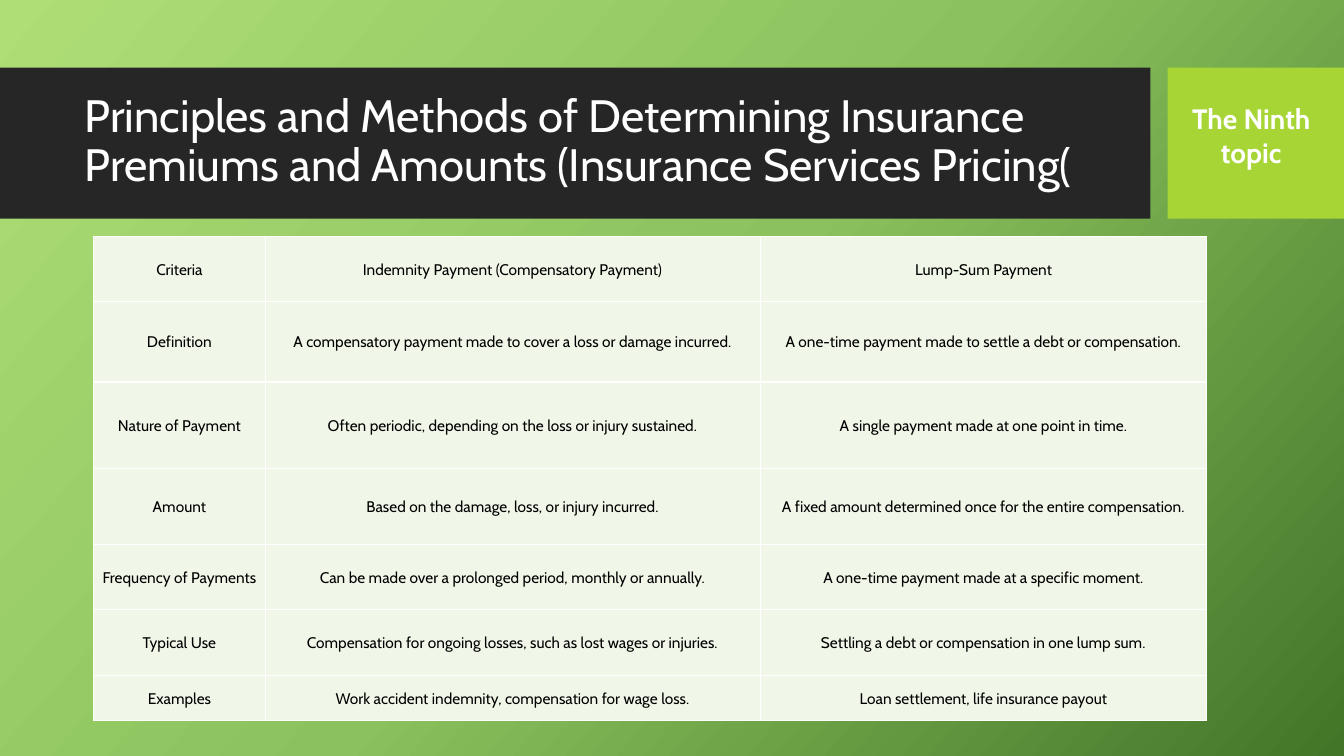
from copy import deepcopy
from typing import NamedTuple

from lxml.etree import SubElement
from pptx import Presentation
from pptx.dml.color import RGBColor
from pptx.enum.shapes import MSO_SHAPE
from pptx.enum.text import MSO_ANCHOR, MSO_AUTO_SIZE, PP_ALIGN
from pptx.oxml.ns import qn
from pptx.slide import Slide
from pptx.table import _Cell as Cell
from pptx.text.text import _Paragraph as Paragraph
from pptx.util import Inches, Pt

FONT = "Cabin"
WHITE = RGBColor(0xFF, 0xFF, 0xFF)
BLACK = RGBColor(0x00, 0x00, 0x00)
CHARCOAL = RGBColor(0x26, 0x26, 0x26)
LIME = RGBColor(0xA7, 0xD5, 0x35)
PALE_GREEN = RGBColor(0xF1, 0xF7, 0xE8)
BACKGROUND_STOPS = [
    (0, RGBColor(0xAF, 0xDE, 0x77)),
    (0.5, RGBColor(0x8B, 0xC2, 0x5D)),
    (1, RGBColor(0x43, 0x75, 0x28)),
]


class Band(NamedTuple):
    left: float
    width: float
    color: RGBColor


class Comparison(NamedTuple):
    height: float
    criterion: str
    indemnity: str
    lump_sum: str


BANDS = [Band(0, 11.41, CHARCOAL), Band(11.58, 1.75, LIME)]
COLUMN_WIDTHS = [1.7, 4.91, 4.43]
COMPARISONS = [
    Comparison(0.64, "Criteria", "Indemnity Payment (Compensatory Payment)",
               "Lump-Sum Payment"),
    Comparison(0.8, "Definition",
               "A compensatory payment made to cover a loss or damage incurred.",
               "A one-time payment made to settle a debt or compensation."),
    Comparison(0.86, "Nature of Payment",
               "Often periodic, depending on the loss or injury sustained.",
               "A single payment made at one point in time."),
    Comparison(0.75, "Amount", "Based on the damage, loss, or injury incurred.",
               "A fixed amount determined once for the entire compensation."),
    Comparison(0.65, "Frequency of Payments",
               "Can be made over a prolonged period, monthly or annually.",
               "A one-time payment made at a specific moment."),
    Comparison(0.65, "Typical Use",
               "Compensation for ongoing losses, such as lost wages or injuries.",
               "Settling a debt or compensation in one lump sum."),
    Comparison(0.45, "Examples",
               "Work accident indemnity, compensation for wage loss.",
               "Loan settlement, life insurance payout"),
]


def format_paragraph(paragraph: Paragraph, size: float, color: RGBColor,
                     alignment: PP_ALIGN = PP_ALIGN.CENTER, bold: bool = False) -> None:
    paragraph.alignment = alignment
    for run in paragraph.runs:
        run.font.name = FONT
        run.font.size = Pt(size)
        run.font.bold = bold
        run.font.color.rgb = color


def paint_background(slide: Slide) -> None:
    fill = slide.background.fill
    fill.gradient()
    fill.gradient_angle = 360 - 42
    stop_list = slide.element.find(".//" + qn("a:gsLst"))
    stop_list.append(deepcopy(stop_list[-1]))
    for stop, (position, color) in zip(fill.gradient_stops, BACKGROUND_STOPS):
        stop.position = position
        stop.color.rgb = color


def add_band(slide: Slide, band: Band) -> None:
    shape = slide.shapes.add_shape(MSO_SHAPE.RECTANGLE, Inches(band.left), Inches(0.67),
                                   Inches(band.width), Inches(1.5))
    shape.shadow.inherit = False
    shape.fill.solid()
    shape.fill.fore_color.rgb = band.color
    shape.line.fill.background()


def place_title(slide: Slide) -> None:
    title = slide.shapes.title
    title.left, title.top = Inches(0.74), Inches(0.82)
    title.width, title.height = Inches(10.51), Inches(1.18)
    frame = title.text_frame
    frame.text = ("Principles and Methods of Determining Insurance "
                  "Premiums and Amounts (Insurance Services Pricing(")
    frame.word_wrap = True
    frame.auto_size = MSO_AUTO_SIZE.NONE
    frame.vertical_anchor = MSO_ANCHOR.MIDDLE
    paragraph = frame.paragraphs[0]
    paragraph.line_spacing = 0.9
    format_paragraph(paragraph, 32.4, WHITE, PP_ALIGN.LEFT)
    # Bring the title in front of the bands
    title.element.getparent().append(title.element)


def add_topic(slide: Slide) -> None:
    box = slide.shapes.add_textbox(Inches(11.66), Inches(0.96), Inches(1.5), Inches(0.77))
    frame = box.text_frame
    frame.text = "The Ninth\ntopic"
    frame.word_wrap = False
    frame.auto_size = MSO_AUTO_SIZE.SHAPE_TO_FIT_TEXT
    for paragraph in frame.paragraphs:
        format_paragraph(paragraph, 20, WHITE, bold=True)


def add_borders(cell: Cell) -> None:
    properties = cell._tc.get_or_add_tcPr()
    for index, side in enumerate(("a:lnL", "a:lnR", "a:lnT", "a:lnB")):
        line = SubElement(properties, qn(side), w=str(Pt(1)))
        SubElement(SubElement(line, qn("a:solidFill")), qn("a:srgbClr"), val=str(WHITE))
        properties.insert(index, line)


def fill_cell(cell: Cell, text: str) -> None:
    cell.text_frame.text = text
    cell.vertical_anchor = MSO_ANCHOR.MIDDLE
    cell.margin_left = cell.margin_right = cell.margin_top = Inches(0.01)
    cell.margin_bottom = 0
    cell.fill.solid()
    cell.fill.fore_color.rgb = PALE_GREEN
    format_paragraph(cell.text_frame.paragraphs[0], 11, BLACK)
    add_borders(cell)


def add_comparison_table(slide: Slide) -> None:
    frame = slide.shapes.add_table(
        len(COMPARISONS), len(COLUMN_WIDTHS), Inches(0.93), Inches(2.35),
        Inches(sum(COLUMN_WIDTHS)), Inches(sum(row.height for row in COMPARISONS)))
    table = frame.table
    for column, width in zip(table.columns, COLUMN_WIDTHS):
        column.width = Inches(width)
    for row, (height, *texts) in zip(table.rows, COMPARISONS):
        row.height = Inches(height)
        for cell, text in zip(row.cells, texts):
            fill_cell(cell, text)


def main() -> None:
    presentation = Presentation()
    presentation.slide_width = Inches(13.33)
    presentation.slide_height = Inches(7.5)
    slide = presentation.slides.add_slide(presentation.slide_layouts[5])

    # Background and header
    paint_background(slide)
    for band in BANDS:
        add_band(slide, band)
    place_title(slide)
    add_topic(slide)

    # Payment comparison
    add_comparison_table(slide)
    presentation.save("out.pptx")


if __name__ == "__main__":
    main()
